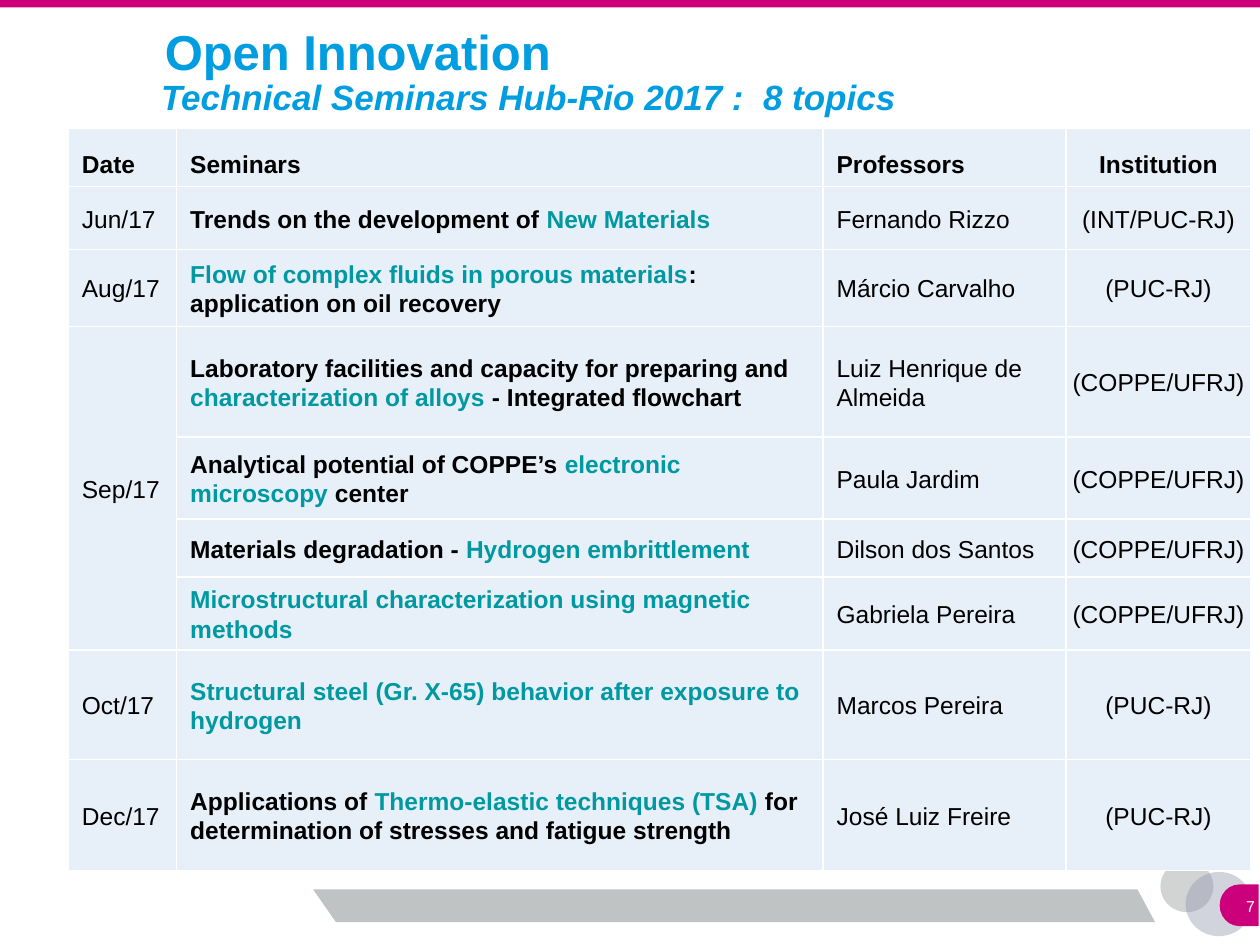
from pptx import Presentation
from pptx.dml.color import RGBColor
from pptx.enum.shapes import MSO_SHAPE
from pptx.enum.text import MSO_ANCHOR, PP_ALIGN
from pptx.oxml import parse_xml
from pptx.oxml.ns import nsdecls, qn
from pptx.util import Inches, Pt
from lxml import etree

RECT, OVAL = MSO_SHAPE.RECTANGLE, MSO_SHAPE.OVAL
TRIANGLE, DELAY = MSO_SHAPE.ISOSCELES_TRIANGLE, MSO_SHAPE.FLOWCHART_DELAY
MIDDLE, BOTTOM = MSO_ANCHOR.MIDDLE, MSO_ANCHOR.BOTTOM
LEFT, CENTER, RIGHT = PP_ALIGN.LEFT, PP_ALIGN.CENTER, PP_ALIGN.RIGHT

THEME = dict(
    font="Arial", title=28, subtitle=20, body=14, number=9,
    blue="009DE0", teal="0098A1", pink="CD007B", grey="BFC3C3",
    slate="9095AC", cell="E7EFF9", white="FFFFFF", black="000000",
)

# Content: "|" switches the highlight on and off within a seminar title
TITLE = "Open Innovation"
SUBTITLE = "Technical Seminars Hub-Rio 2017 :  8 topics"
PAGE = "7"
HEADINGS = ("Date", "Seminars", "Professors", "Institution")
SEMINARS = [
    ("Jun/17", "Trends on the development of |New Materials",
     "Fernando Rizzo", "(INT/PUC-RJ)"),
    ("Aug/17", "|Flow of complex fluids in porous materials|: application on oil recovery",
     "Márcio Carvalho", "(PUC-RJ)"),
    ("Sep/17", "Laboratory facilities and capacity for preparing and "
     "|characterization of alloys |- Integrated flowchart",
     "Luiz Henrique de Almeida", "(COPPE/UFRJ)"),
    ("", "Analytical potential of COPPE’s |electronic microscopy| center",
     "Paula Jardim", "(COPPE/UFRJ)"),
    ("", "Materials degradation - |Hydrogen embrittlement",
     "Dilson dos Santos", "(COPPE/UFRJ)"),
    ("", "|Microstructural characterization using magnetic methods",
     "Gabriela Pereira", "(COPPE/UFRJ)"),
    ("Oct/17", "|Structural steel (Gr. X-65) behavior after exposure to hydrogen",
     "Marcos Pereira", "(PUC-RJ)"),
    ("Dec/17", "Applications of |Thermo-elastic techniques (TSA) "
     "|for determination of stresses and fatigue strength",
     "José Luiz Freire", "(PUC-RJ)"),
]

# Grid, in inches
WIDTH, HEIGHT = 10, 7.5
TABLE_LEFT, TABLE_TOP = 0.54, 1.02
COLUMNS = (0.86, 5.13, 1.93, 1.47)
ROWS = (0.46, 0.5, 0.61, 0.88, 0.65, 0.46, 0.58, 0.87, 0.88)

prs = Presentation()
prs.slide_width, prs.slide_height = Inches(WIDTH), Inches(HEIGHT)
slide = prs.slides.add_slide(prs.slide_layouts[6])


def color(name):
    return RGBColor.from_string(THEME[name])


def paint(shape, fill, alpha=None, outlined=False):
    shape.shadow.inherit = False
    shape.fill.solid()
    shape.fill.fore_color.rgb = color(fill)
    if alpha:
        tint = shape.fill._xPr.find(".//" + qn("a:srgbClr"))
        etree.SubElement(tint, qn("a:alpha")).set("val", str(alpha * 1000))
    if outlined:
        shape.line.color.rgb = color(fill)
        shape.line.width = Pt(1)
    else:
        shape.line.fill.background()
    return shape


def add_block(kind, box, fill, **look):
    return paint(slide.shapes.add_shape(kind, *map(Inches, box)), fill, **look)


def add_outline(points, fill):
    builder = slide.shapes.build_freeform(*map(Inches, points[0]), scale=1.0)
    builder.add_line_segments([tuple(map(Inches, p)) for p in points[1:]], close=True)
    paint(builder.convert_to_shape(), fill)


def style(run, size, tone, bold=False, italic=False):
    font = run.font
    font.name, font.size = THEME["font"], Pt(THEME[size])
    font.bold, font.italic = bold, italic
    font.color.rgb = color(tone)


def add_label(text, box, size, tone, anchor=BOTTOM, align=LEFT, side=0.1,
              spacing=0.9, **look):
    frame = slide.shapes.add_textbox(*map(Inches, box)).text_frame
    frame.word_wrap, frame.vertical_anchor = True, anchor
    frame.margin_left = frame.margin_right = Inches(side)
    frame.margin_top = frame.margin_bottom = Inches(0.05)
    frame.text = text
    line = frame.paragraphs[0]
    line.alignment, line.line_spacing = align, spacing
    style(line.runs[0], size, tone, **look)


def fill_cell(cell, text, heading, column):
    cell.fill.solid()
    cell.fill.fore_color.rgb = color("cell")
    cell.vertical_anchor = MIDDLE
    cell.margin_left = cell.margin_right = cell.margin_top = Inches(0.01)
    cell.margin_bottom = 0
    # White rules precede the fill in the cell properties
    for place, side in enumerate(("lnL", "lnR", "lnT", "lnB")):
        cell._tc.get_or_add_tcPr().insert(place, parse_xml(
            f'<a:{side} {nsdecls("a")} w="{Pt(1)}"><a:solidFill>'
            f'<a:srgbClr val="{THEME["white"]}"/></a:solidFill></a:{side}>'))
    line = cell.text_frame.paragraphs[0]
    if column == len(COLUMNS) - 1:
        line.alignment = CENTER
    else:
        line._p.get_or_add_pPr().set("marL", str(Inches(0.1)))
    line.line_spacing = 1.5 if heading else 1.07
    line.space_after = Pt(0 if heading else 8)
    for part, words in enumerate(text.split("|")):
        if words:
            run = line.add_run()
            run.text = words
            style(run, "body", "teal" if part % 2 else "black",
                  bold=heading or column == 1)


# Footer band with its slanted ends, and the top bar
add_block(RECT, (1.29, 7.06, WIDTH - 1.29, 0.26), "grey")
add_outline([(1.22, 6.74), (1.62, HEIGHT), (0.5, HEIGHT), (0.5, 6.72)], "white")
add_outline([(5.24, 0.02), (WIDTH, 0), (WIDTH, HEIGHT), (9.25, HEIGHT), (9.25, 7.47)],
            "white")
add_block(RECT, (0, 0, WIDTH, 0.06), "pink")

# Page marker
add_block(OVAL, (9.21, 6.83, 0.42, 0.41), "grey", alpha=70)
add_block(OVAL, (9.41, 6.92, 0.53, 0.51), "slate", alpha=40)
tab = add_block(DELAY, (9.68, 7.02, 0.31, 0.33), "pink")
tab._element.spPr.find(qn("a:xfrm")).set("flipH", "1")
add_block(RECT, (1.36, 6.99, 1.03, 0.38), "white", outlined=True)
add_block(TRIANGLE, (2.15, 7, 0.57, 0.41), "white", outlined=True)
add_label(PAGE, (9.55, 7.03, 0.45, 0.32), "number", "white", anchor=MIDDLE,
          align=RIGHT, side=0.04, spacing=1.0)

# Seminar table
schedule = slide.shapes.add_table(
    len(ROWS), len(COLUMNS), Inches(TABLE_LEFT), Inches(TABLE_TOP),
    Inches(sum(COLUMNS)), Inches(sum(ROWS))).table
schedule.first_row = schedule.horz_banding = False
for column, width in zip(schedule.columns, COLUMNS):
    column.width = Inches(width)
for row, height in zip(schedule.rows, ROWS):
    row.height = Inches(height)
for r, entry in enumerate([HEADINGS, *SEMINARS]):
    for c, text in enumerate(entry):
        fill_cell(schedule.cell(r, c), text, r == 0, c)

# A date covers the undated seminars below it
dates = [entry[0] for entry in SEMINARS]
undated = [r for r, date in enumerate(dates, 1) if not date]
schedule.cell(undated[0] - 1, 0).merge(schedule.cell(undated[-1], 0))

# Titles
add_label(SUBTITLE, (1.18, 0.55, 8.1, 0.44), "subtitle", "blue", bold=True, italic=True)
add_label(TITLE, (1.21, 0.1, 5.38, 0.59), "title", "blue", bold=True)

prs.save("out.pptx")
